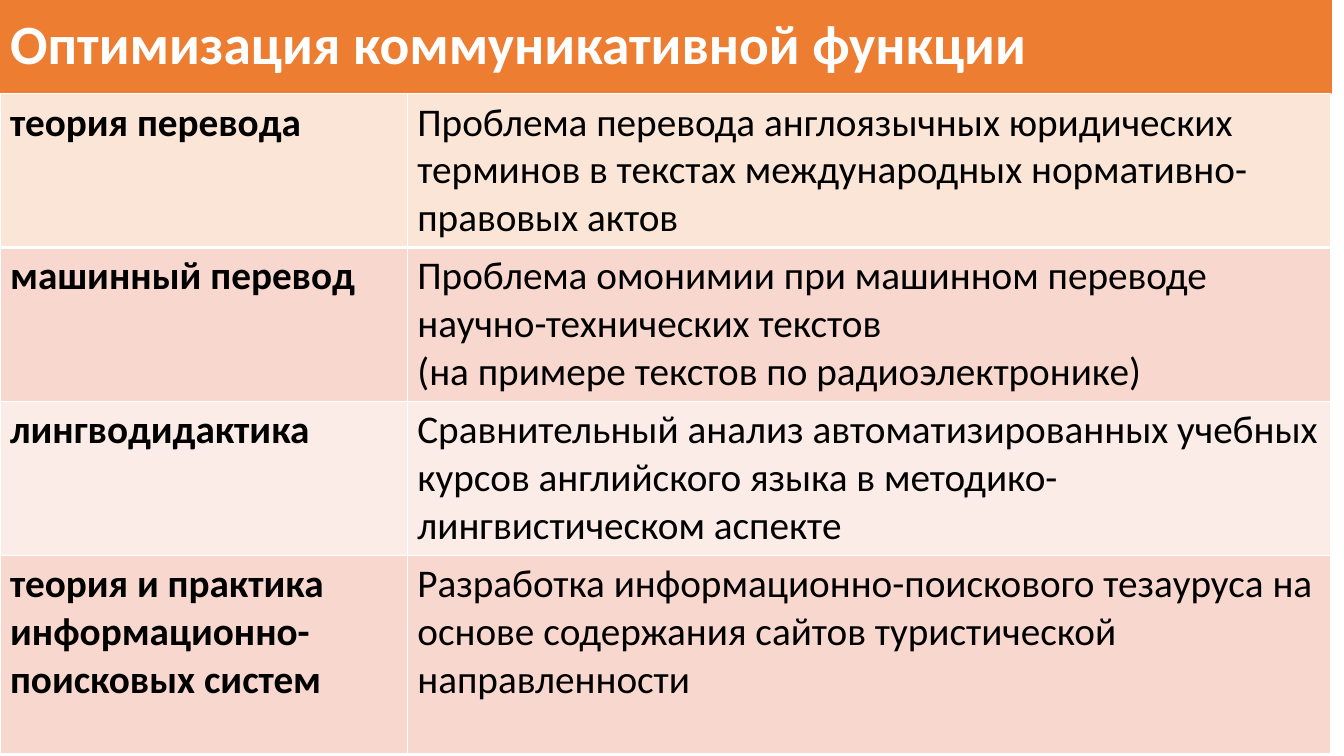
from lxml.etree import SubElement
from pptx import Presentation
from pptx.dml.color import RGBColor
from pptx.enum.text import MSO_ANCHOR, MSO_AUTO_SIZE, PP_ALIGN
from pptx.oxml.ns import qn
from pptx.util import Inches, Pt

COLORS = {
    "orange": "ED7D31",
    "peach": "FBE5D6",
    "rose": "F8D7CE",
    "blush": "FCECE8",
    "white": "FFFFFF",
    "black": "000000",
}
ROWS = [
    ("теория перевода",
     "Проблема перевода англоязычных юридических терминов в текстах "
     "международных нормативно-правовых актов", "peach", 1.5),
    ("машинный перевод",
     "Проблема омонимии при машинном переводе научно-технических текстов\n"
     "(на примере текстов по радиоэлектронике)", "rose", 1.5),
    ("лингводидактика",
     "Сравнительный анализ автоматизированных учебных курсов английского "
     "языка в методико-лингвистическом аспекте", "blush", 1.5),
    ("теория и практика информационно-поисковых систем",
     "Разработка информационно-поискового тезауруса на основе содержания "
     "сайтов туристической направленности", "rose", 1.97),
]
WIDTH = 13.21
HEAD = 0.93


def style(frame, size, color, bold):
    for para in frame.paragraphs:
        for run in para.runs:
            run.font.name = "Calibri"
            run.font.size = Pt(size)
            run.font.bold = bold
            run.font.color.rgb = RGBColor.from_string(COLORS[color])


def border(cell, side, width):
    line = SubElement(cell._tc.get_or_add_tcPr(), qn("a:ln" + side), w=str(Pt(width)))
    fill = SubElement(line, qn("a:solidFill"))
    SubElement(fill, qn("a:srgbClr"), val=COLORS["white"])


deck = Presentation()
deck.slide_width = Inches(13.33)
deck.slide_height = Inches(7.5)
slide = deck.slides.add_slide(deck.slide_layouts[5])

title = slide.shapes.title
title.left, title.top = Inches(0), Inches(0)
title.width, title.height = Inches(WIDTH), Inches(HEAD)
title.fill.solid()
title.fill.fore_color.rgb = RGBColor.from_string(COLORS["orange"])
frame = title.text_frame
frame.text = "Оптимизация коммуникативной функции"
frame.auto_size = MSO_AUTO_SIZE.NONE
frame.vertical_anchor = MSO_ANCHOR.MIDDLE
frame.paragraphs[0].alignment = PP_ALIGN.LEFT
frame.paragraphs[0].line_spacing = 0.9
style(frame, 39.6, "white", True)

table = slide.shapes.add_table(
    len(ROWS), 2, Inches(0), Inches(HEAD), Inches(WIDTH), Inches(6.47)).table
table.first_row = False
table.horz_banding = False
table.columns[0].width = Inches(4.04)
table.columns[1].width = Inches(9.16)

for i, (field, topic, tint, height) in enumerate(ROWS):
    table.rows[i].height = Inches(height)
    for j, text in enumerate((field, topic)):
        cell = table.cell(i, j)
        cell.text_frame.text = text
        style(cell.text_frame, 28, "black", j == 0)
        for side in "LRTB":
            border(cell, side, 3 if (i, side) in ((0, "B"), (1, "T")) else 1)
        cell.fill.solid()
        cell.fill.fore_color.rgb = RGBColor.from_string(COLORS[tint])

deck.save("out.pptx")
